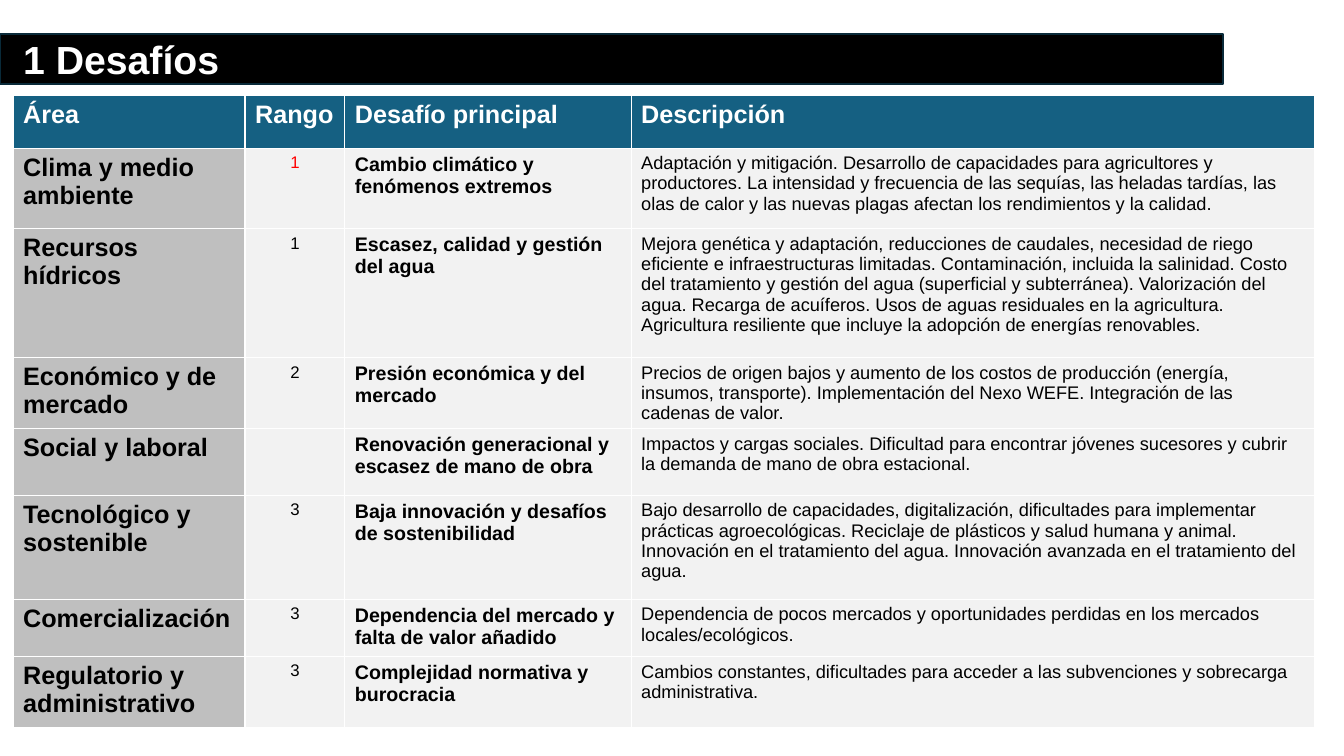
from pptx import Presentation
from pptx.dml.color import RGBColor
from pptx.enum.shapes import MSO_SHAPE as Shape
from pptx.enum.text import MSO_ANCHOR as Anchor, PP_ALIGN as Align
from pptx.util import Inches, Pt

BLACK, WHITE, RED = "000000", "FFFFFF", "FF0000"
HEADER_FILL, AREA_FILL, BODY_FILL = "156082", "BFBFBF", "F2F2F2"
COLUMN_WIDTHS = [2.3, 0.99, 2.84, 6.78]
ROW_HEIGHTS = [0.52, 0.8, 1.28, 0.65, 0.66, 1.03, 0.57, 0.7]
COLUMN_STYLES = [
    (AREA_FILL, 18, True, Align.LEFT),
    (BODY_FILL, 12, False, Align.CENTER),
    (BODY_FILL, 14, True, Align.LEFT),
    (BODY_FILL, 13, False, Align.LEFT),
]
HEADINGS = ["Área", "Rango", "Desafío principal", "Descripción"]
CHALLENGES = [
    ("Clima y medio ambiente", "1", "Cambio climático y fenómenos extremos",
     "Adaptación y mitigación. Desarrollo de capacidades para agricultores y productores. "
     "La intensidad y frecuencia de las sequías, las heladas tardías, las olas de calor y "
     "las nuevas plagas afectan los rendimientos y la calidad."),
    ("Recursos hídricos", "1", "Escasez, calidad y gestión del agua",
     "Mejora genética y adaptación, reducciones de caudales, necesidad de riego eficiente e "
     "infraestructuras limitadas. Contaminación, incluida la salinidad. Costo del tratamiento "
     "y gestión del agua (superficial y subterránea). Valorización del agua. Recarga de "
     "acuíferos. Usos de aguas residuales en la agricultura. Agricultura resiliente que "
     "incluye la adopción de energías renovables."),
    ("Económico y de mercado", "2", "Presión económica y del mercado",
     "Precios de origen bajos y aumento de los costos de producción (energía, insumos, "
     "transporte). Implementación del Nexo WEFE. Integración de las cadenas de valor."),
    ("Social y laboral", "", "Renovación generacional y escasez de mano de obra",
     "Impactos y cargas sociales. Dificultad para encontrar jóvenes sucesores y cubrir la "
     "demanda de mano de obra estacional."),
    ("Tecnológico y sostenible", "3", "Baja innovación y desafíos de sostenibilidad",
     "Bajo desarrollo de capacidades, digitalización, dificultades para implementar prácticas "
     "agroecológicas. Reciclaje de plásticos y salud humana y animal. Innovación en el "
     "tratamiento del agua. Innovación avanzada en el tratamiento del agua."),
    ("Comercialización", "3", "Dependencia del mercado y falta de valor añadido",
     "Dependencia de pocos mercados y oportunidades perdidas en los mercados "
     "locales/ecológicos."),
    ("Regulatorio y administrativo", "3", "Complejidad normativa y burocracia",
     "Cambios constantes, dificultades para acceder a las subvenciones y sobrecarga "
     "administrativa."),
]


def paint(color_format, color):
    """Apply a hex colour to a fill or font colour."""
    color_format.rgb = RGBColor.from_string(color)


def write(frame, text, size, color, bold, align=Align.LEFT):
    """Put one formatted paragraph in a text frame."""
    frame.text = text
    paragraph = frame.paragraphs[0]
    paragraph.alignment = align
    font = paragraph.font
    font.name, font.size, font.bold = "Arial", Pt(size), bold
    paint(font.color, color)


def add_title_band(slide):
    """Draw the black band behind the title."""
    band = slide.shapes.add_shape(
        Shape.RECTANGLE, Inches(0), Inches(0.34), Inches(12.13), Inches(0.49))
    band.shadow.inherit = False
    band.fill.solid()
    paint(band.fill.fore_color, BLACK)
    paint(band.line.color, "092A39")
    band.line.width = Pt(1.5)
    slide.shapes._spTree.insert(2, band._element)


def place_title(slide, text):
    """Position and format the title placeholder."""
    title = slide.shapes.title
    title.left, title.top = Inches(0.13), Inches(0.24)
    title.width, title.height = Inches(10.03), Inches(0.69)
    write(title.text_frame, text, 28, WHITE, True)
    title.text_frame.vertical_anchor = Anchor.MIDDLE


def fill_cell(cell, text, fill, size, bold, align, color=BLACK):
    """Fill one table cell with colour and text."""
    cell.fill.solid()
    paint(cell.fill.fore_color, fill)
    write(cell.text_frame, text, size, color, bold, align)


def add_challenge_table(slide):
    """Build the table of ranked challenges."""
    table = slide.shapes.add_table(
        len(ROW_HEIGHTS), len(COLUMN_WIDTHS), Inches(0.13), Inches(0.95),
        Inches(sum(COLUMN_WIDTHS)), Inches(sum(ROW_HEIGHTS))).table
    table.horz_banding = False
    for column, width in zip(table.columns, COLUMN_WIDTHS):
        column.width = Inches(width)
    for row, height in zip(table.rows, ROW_HEIGHTS):
        row.height = Inches(height)
    for col, heading in enumerate(HEADINGS):
        fill_cell(table.cell(0, col), heading, HEADER_FILL, 18, True, Align.LEFT, WHITE)
    for row, challenge in enumerate(CHALLENGES, start=1):
        for col, (text, style) in enumerate(zip(challenge, COLUMN_STYLES)):
            fill_cell(table.cell(row, col), text, *style)
    first_rank = table.cell(1, 1).text_frame.paragraphs[0]
    paint(first_rank.font.color, RED)


def main():
    """Build and save the slide."""
    deck = Presentation()
    deck.slide_width, deck.slide_height = Inches(13.33), Inches(7.5)
    slide = deck.slides.add_slide(deck.slide_layouts[5])
    add_title_band(slide)
    place_title(slide, "1 Desafíos")
    add_challenge_table(slide)
    deck.save("out.pptx")


if __name__ == "__main__":
    main()
